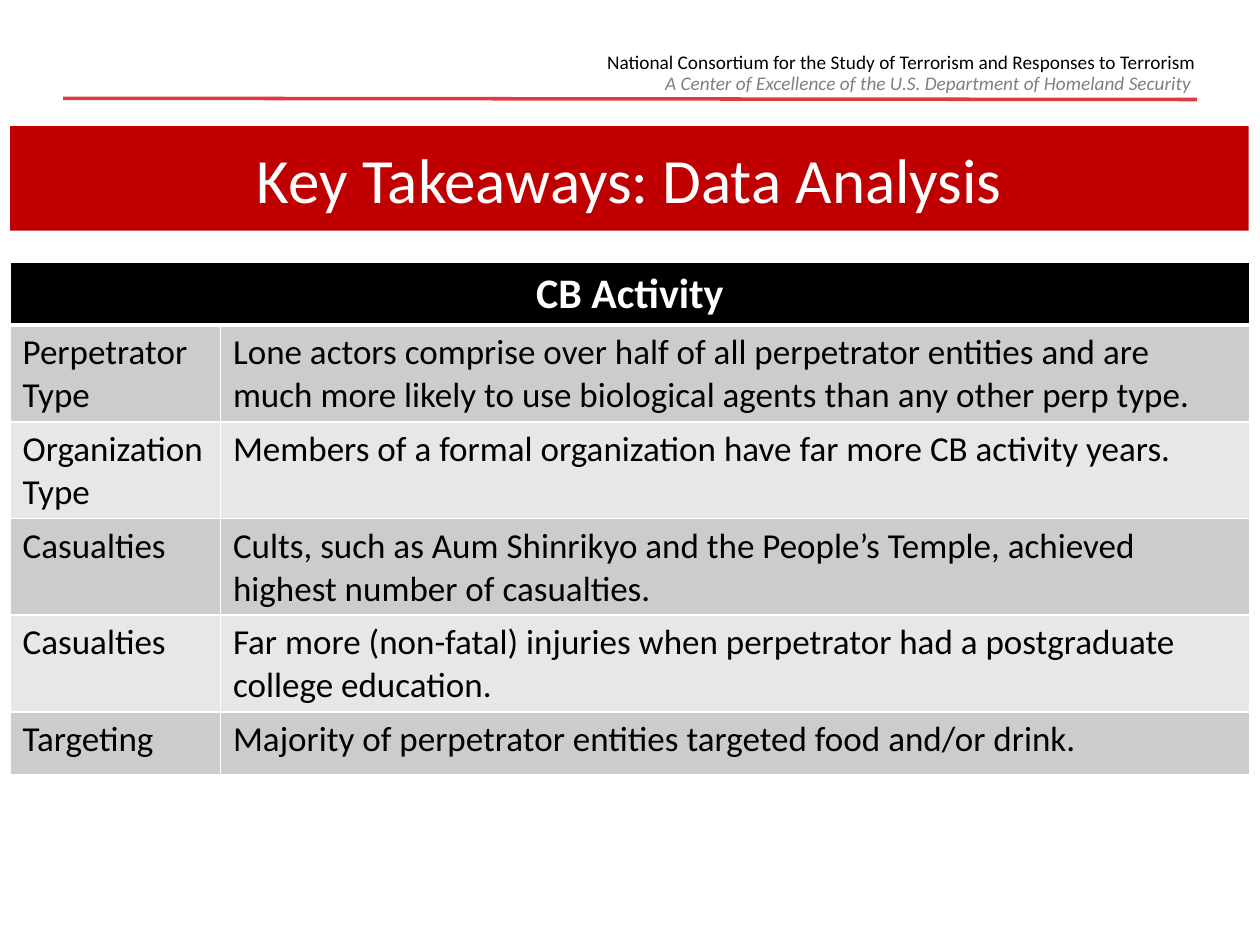
from lxml.etree import SubElement
from pptx import Presentation
from pptx.dml.color import RGBColor
from pptx.enum.text import MSO_ANCHOR as Anchor, MSO_AUTO_SIZE as AutoSize, PP_ALIGN as Align
from pptx.oxml.ns import qn
from pptx.util import Inches, Pt

# Content
CONSORTIUM = "National Consortium for the Study of Terrorism and Responses to Terrorism"
CENTER = "A Center of Excellence of the U.S. Department of Homeland Security"
TITLE = "Key Takeaways: Data Analysis"
TABLE_HEADING = "CB Activity"
TAKEAWAYS = [
    ("Perpetrator Type", "Lone actors comprise over half of all perpetrator entities and are "
     "much more likely to use biological agents than any other perp type."),
    ("Organization Type", "Members of a formal organization have far more CB activity years."),
    ("Casualties", "Cults, such as Aum Shinrikyo and the People’s Temple, achieved "
     "highest number of casualties."),
    ("Casualties", "Far more (non-fatal) injuries when perpetrator had a postgraduate "
     "college education."),
    ("Targeting", "Majority of perpetrator entities targeted food and/or drink."),
]

# Layout and style
FONT = "Calibri"
LEFT, WIDTH = 0.08, 9.83
COLUMN_WIDTHS = [1.67, 8.17]
ROW_HEIGHTS = [0.33, 0.7, 0.7, 0.7, 0.7, 0.5]
BANDS = ["CCCCCC", "E7E7E7"]


def color(hex_code):
    return RGBColor.from_string(hex_code)


def write(frame, text, size, hex_code, align=Align.LEFT, bold=False, italic=False):
    paragraph = frame.paragraphs[0]
    paragraph.text = text
    paragraph.alignment = align
    font = paragraph.font
    font.name, font.size, font.bold, font.italic = FONT, Pt(size), bold, italic
    font.color.rgb = color(hex_code)


def fill(part, hex_code):
    part.fill.solid()
    part.fill.fore_color.rgb = color(hex_code)


def set_borders(cell, top=1, bottom=1):
    properties = cell._tc.get_or_add_tcPr()
    for side, points in (("L", 1), ("R", 1), ("T", top), ("B", bottom)):
        line = SubElement(properties, qn(f"a:ln{side}"), w=str(Pt(points)))
        solid = SubElement(line, qn("a:solidFill"))
        SubElement(solid, qn("a:srgbClr"), val="FFFFFF")


presentation = Presentation()
presentation.slide_width, presentation.slide_height = Inches(10), Inches(7.5)
slide = presentation.slides.add_slide(presentation.slide_layouts[5])
shapes = slide.shapes

# Page header
consortium = shapes.add_textbox(Inches(3.97), Inches(0.33), Inches(5.62), Inches(0.33)).text_frame
consortium.word_wrap = True
consortium.vertical_anchor = Anchor.MIDDLE
write(consortium, CONSORTIUM, 11, "000000", Align.RIGHT)

rule = shapes.add_connector(1, Inches(0.5), Inches(0.78), Inches(9.5), Inches(0.79))
rule.line.color.rgb = color("E03A3E")
rule.line.width = Pt(2)
SubElement(rule._element.spPr, qn("a:effectLst"))

center = shapes.add_textbox(Inches(5.18), Inches(0.52), Inches(4.57), Inches(0.29)).text_frame
center.word_wrap = False
center.auto_size = AutoSize.SHAPE_TO_FIT_TEXT
write(center, CENTER, 11, "808080", italic=True)

# Title band
title = shapes.title
title.left, title.top = Inches(LEFT), Inches(1)
title.width, title.height = Inches(WIDTH), Inches(0.83)
fill(title, "C00000")
title.text_frame.auto_size = AutoSize.NONE
title.text_frame.vertical_anchor = Anchor.MIDDLE
write(title.text_frame, TITLE, 36, "FFFFFF", Align.CENTER)

# Takeaways table
table = shapes.add_table(len(ROW_HEIGHTS), len(COLUMN_WIDTHS), Inches(LEFT), Inches(2.08),
                         Inches(WIDTH), Inches(sum(ROW_HEIGHTS))).table
for column, width in zip(table.columns, COLUMN_WIDTHS):
    column.width = Inches(width)
for row, height in zip(table.rows, ROW_HEIGHTS):
    row.height = Inches(height)

heading = table.cell(0, 0)
heading.merge(table.cell(0, 1))
write(heading.text_frame, TABLE_HEADING, 24, "FFFFFF", Align.CENTER, bold=True)
for cell in table.rows[0].cells:
    set_borders(cell, bottom=3)
    fill(cell, "000000")

for number, takeaway in enumerate(TAKEAWAYS, start=1):
    for cell, text in zip(table.rows[number].cells, takeaway):
        write(cell.text_frame, text, 20, "000000")
        set_borders(cell, top=3 if number == 1 else 1)
        fill(cell, BANDS[(number - 1) % 2])

presentation.save("out.pptx")
